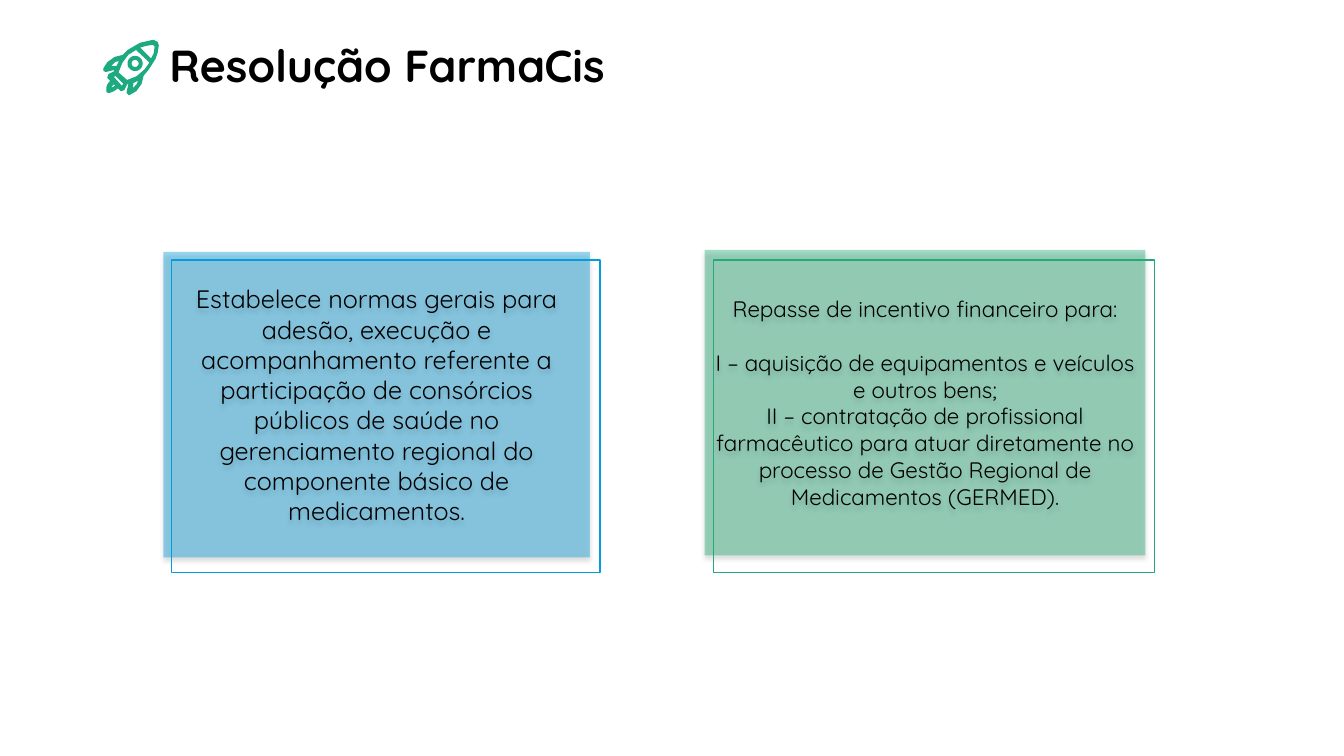
from math import cos, pi, sin

from lxml import etree
from pptx import Presentation
from pptx.dml.color import RGBColor
from pptx.enum.shapes import MSO_SHAPE
from pptx.enum.text import MSO_ANCHOR, MSO_AUTO_SIZE, PP_ALIGN
from pptx.oxml.ns import qn
from pptx.util import Inches, Pt

RECTANGLE = MSO_SHAPE.RECTANGLE
MIDDLE = MSO_ANCHOR.MIDDLE
NO_AUTOFIT = MSO_AUTO_SIZE.NONE
LEFT, CENTER = PP_ALIGN.LEFT, PP_ALIGN.CENTER

FONT = "Quicksand"
BLACK, BLUE, GREEN, ROCKET_GREEN = "000000", "029DDC", "21AB76", "1DAA81"
TITLE_ONLY_LAYOUT = 5

NORMS = ["Estabelece normas gerais para adesão, execução e acompanhamento referente a "
         "participação de consórcios públicos de saúde no gerenciamento regional do "
         "componente básico de medicamentos."]
INCENTIVES = ["Repasse de incentivo financeiro para:",
              "I – aquisição de equipamentos e veículos e outros bens;",
              "II – contratação de profissional farmacêutico para atuar diretamente no "
              "processo de Gestão Regional de Medicamentos (GERMED)."]

ROCKET_BODY = [
    (1.52, .4), (1.39, .43), (1.27, .5), (1.22, .55), (1.14, .57), (1.07, .62), (1.03, .68),
    (1.03, .7), (1.05, .71), (1.13, .69), (1.14, .71), (1.08, .74), (1.07, .77), (1.1, .8),
    (1.07, .84), (1.06, .87), (1.06, .91), (1.08, .92), (1.13, .9), (1.17, .87), (1.2, .9),
    (1.23, .89), (1.26, .83), (1.28, .83), (1.26, .92), (1.28, .94), (1.35, .9), (1.4, .83),
    (1.42, .75), (1.47, .69), (1.54, .58), (1.56, .52), (1.57, .45), (1.56, .42)]
ROCKET_OPENINGS = [
    [(1.52, .44), (1.54, .46), (1.53, .53), (1.5, .59), (1.38, .47), (1.45, .45)],
    [(1.19, .6), (1.16, .66), (1.13, .66), (1.09, .66), (1.1, .65), (1.14, .61)],
    [(1.35, .49), (1.49, .62), (1.44, .69), (1.36, .76), (1.26, .8), (1.17, .72),
     (1.21, .62), (1.27, .54)],
    [(1.15, .75), (1.23, .83), (1.21, .86), (1.12, .76)],
    [(1.13, .83), (1.15, .85), (1.12, .87), (1.09, .88), (1.11, .85)],
    [(1.38, .79), (1.36, .84), (1.31, .89), (1.32, .82)]]


def color(hex_value):
    """Turn a hex string into a colour."""
    return RGBColor.from_string(hex_value)


def format_paragraph(paragraph, size, align, bold=False):
    """Apply the slide's font to a paragraph."""
    paragraph.alignment = align
    paragraph.font.name = FONT
    paragraph.font.size = Pt(size)
    paragraph.font.bold = bold
    paragraph.font.color.rgb = color(BLACK)


def add_title(slide, text):
    """Fill and place the title placeholder."""
    title = slide.shapes.title
    title.left, title.top = Inches(1.58), Inches(0.13)
    title.width, title.height = Inches(10.13), Inches(1.08)
    frame = title.text_frame
    frame.text = text
    frame.auto_size = NO_AUTOFIT
    frame.vertical_anchor = MIDDLE
    frame.paragraphs[0].line_spacing = 0.9
    format_paragraph(frame.paragraphs[0], 32, LEFT, bold=True)


def circle(x, y, radius, steps=24):
    """Return the points of a circle."""
    angles = [2 * pi * step / steps for step in range(steps)]
    return [(x + radius * cos(angle), y + radius * sin(angle)) for angle in angles]


def add_outline(slide, contours, hex_value):
    """Draw closed contours as one filled shape, inner ones as holes."""
    scaled = [[(round(x * 1000), round(y * 1000)) for x, y in contour] for contour in contours]
    builder = slide.shapes.build_freeform(*scaled[0][0], scale=Inches(1) / 1000)
    builder.add_line_segments(scaled[0][1:], close=True)
    for contour in scaled[1:]:
        builder.move_to(*contour[0])
        builder.add_line_segments(contour[1:], close=True)
    outline = builder.convert_to_shape()
    outline.shadow.inherit = False
    outline.fill.solid()
    outline.fill.fore_color.rgb = color(hex_value)
    outline.line.color.rgb = color(hex_value)
    outline.line.width = Pt(0.75)


def add_rectangle(slide, left, top, width, height):
    """Add a rectangle without the theme's shadow."""
    rectangle = slide.shapes.add_shape(
        RECTANGLE, Inches(left), Inches(top), Inches(width), Inches(height))
    rectangle.shadow.inherit = False
    return rectangle


def set_alpha(color_element, percent):
    """Set the opacity of a colour element."""
    etree.SubElement(color_element, qn("a:alpha"), val=str(percent * 1000))


def add_soft_shadow(shape):
    """Cast a soft shadow straight down."""
    effects = shape.element.spPr.find(qn("a:effectLst"))
    shadow = etree.SubElement(effects, qn("a:outerShdw"), blurRad=str(Pt(3.5)),
                              dist=str(Pt(2.2)), dir="5400000", algn="t", rotWithShape="0")
    set_alpha(etree.SubElement(shadow, qn("a:srgbClr"), val=BLACK), 32)


def add_card(slide, box, hex_value, lines, size):
    """Add a translucent card; the first line stands apart from the rest."""
    card = add_rectangle(slide, *box)
    card.fill.solid()
    card.fill.fore_color.rgb = color(hex_value)
    set_alpha(card.element.spPr.find(".//" + qn("a:srgbClr")), 40)
    card.line.fill.background()
    add_soft_shadow(card)
    frame = card.text_frame
    frame.word_wrap = True
    frame.vertical_anchor = MIDDLE
    frame.margin_left = frame.margin_right = Inches(0.1)
    frame.margin_top = frame.margin_bottom = Inches(0.1)
    frame.text = "\n".join(lines)
    for paragraph in frame.paragraphs:
        format_paragraph(paragraph, size, CENTER)
    if len(lines) > 1:
        frame.paragraphs[0].space_after = Pt(19)


def add_frame(slide, box, hex_value):
    """Add an unfilled frame over a card."""
    frame = add_rectangle(slide, *box)
    frame.fill.background()
    frame.line.color.rgb = color(hex_value)
    frame.line.width = Pt(1)


def main():
    """Build the slide and save it."""
    presentation = Presentation()
    presentation.slide_width, presentation.slide_height = Inches(13.33), Inches(7.5)
    slide = presentation.slides.add_slide(presentation.slide_layouts[TITLE_ONLY_LAYOUT])
    add_title(slide, "Resolução FarmaCis")
    add_outline(slide, [ROCKET_BODY] + ROCKET_OPENINGS, ROCKET_GREEN)
    add_outline(slide, [circle(1.34, 0.63, 0.07), circle(1.34, 0.63, 0.04)], ROCKET_GREEN)
    add_card(slide, (1.62, 2.5, 4.23, 3.03), BLUE, NORMS, 18)
    add_card(slide, (6.99, 2.48, 4.37, 3.03), GREEN, INCENTIVES, 16)
    add_frame(slide, (1.7, 2.58, 4.25, 3.1), BLUE)
    add_frame(slide, (7.08, 2.58, 4.37, 3.1), GREEN)
    presentation.save("out.pptx")


if __name__ == "__main__":
    main()
